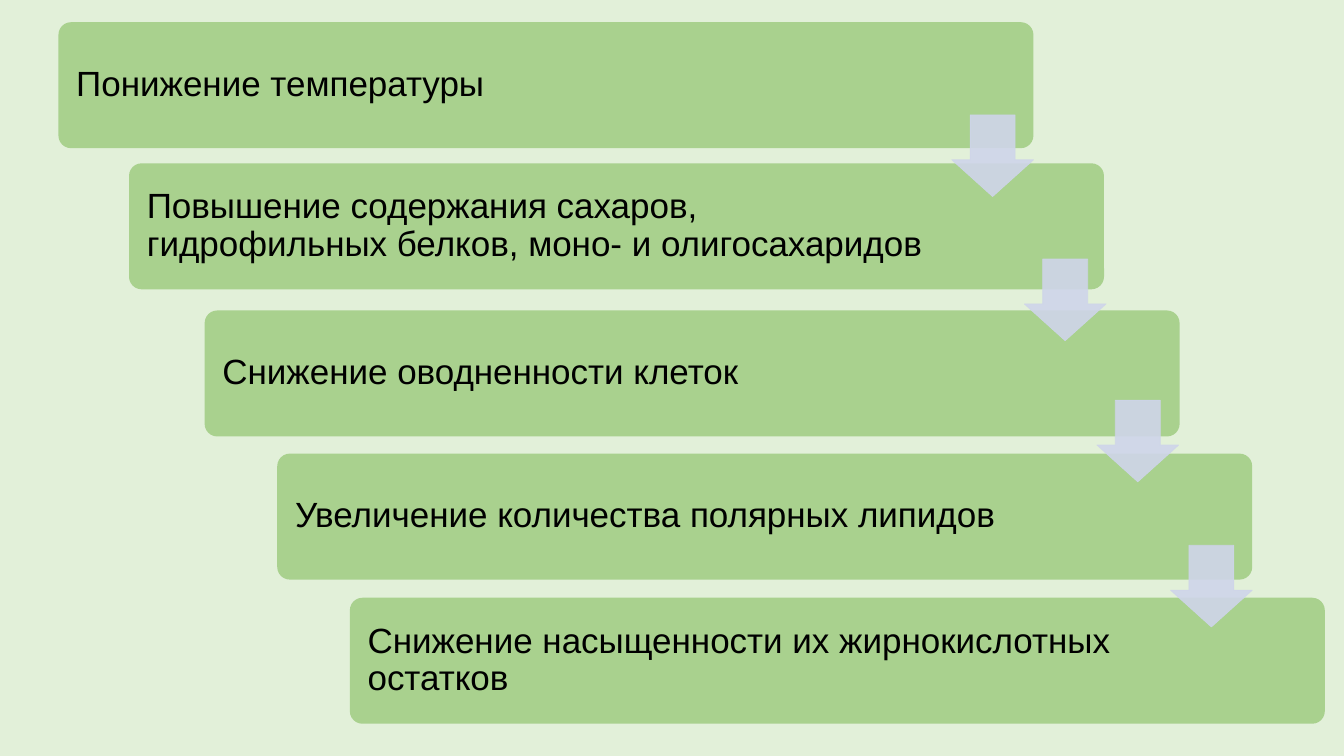
from dataclasses import dataclass

from lxml.etree import SubElement
from pptx import Presentation
from pptx.dml.color import RGBColor
from pptx.enum.shapes import MSO_SHAPE as Shape
from pptx.enum.text import MSO_ANCHOR as Anchor, PP_ALIGN as Align
from pptx.oxml.ns import qn
from pptx.slide import Slide
from pptx.util import Inches, Pt

COLORS = {"background": "E2F0D9", "step": "A9D18E", "arrow": "CFD5EA", "text": "000000"}
STEP_W, STEP_H = 9.67, 1.25
ARROW_SIZE = 0.81
ARROW_ALPHA = 90


@dataclass
class Step:
    """A rounded box of the cascade."""
    left: float
    top: float
    text: str


@dataclass
class Arrow:
    """A down arrow leading to the next step."""
    left: float
    top: float


STEPS = [
    Step(0.58, 0.22, "Понижение температуры"),
    Step(1.28, 1.62, "Повышение содержания сахаров, гидрофильных белков, моно- и олигосахаридов"),
    Step(2.03, 3.08, "Снижение оводненности клеток"),
    Step(2.75, 4.5, "Увеличение количества полярных липидов"),
    Step(3.47, 5.93, "Снижение насыщенности их жирнокислотных остатков"),
]
ARROWS = [Arrow(9.44, 1.14), Arrow(10.16, 2.57), Arrow(10.88, 3.97), Arrow(11.61, 5.41)]


def rgb(name: str) -> RGBColor:
    """Return the named colour."""
    return RGBColor.from_string(COLORS[name])


def draw_step(s: Slide, step: Step) -> None:
    """Draw a step box with its text."""
    sp = s.shapes.add_shape(Shape.ROUNDED_RECTANGLE, Inches(step.left), Inches(step.top),
                            Inches(STEP_W), Inches(STEP_H))
    sp.adjustments[0] = 0.1
    sp.shadow.inherit = False
    sp.fill.solid()
    sp.fill.fore_color.rgb = rgb("step")
    sp.line.fill.background()
    tf = sp.text_frame
    tf.word_wrap = True
    tf.vertical_anchor = Anchor.MIDDLE
    tf.margin_left, tf.margin_right = Inches(0.14), Inches(1.67)
    tf.margin_top = tf.margin_bottom = Inches(0.14)
    p = tf.paragraphs[0]
    p.alignment = Align.LEFT
    p.line_spacing = 0.9
    p.space_after = Pt(8.75)
    r = p.add_run()
    r.text = step.text
    r.font.name = "Arial"
    r.font.size = Pt(25)
    r.font.color.rgb = rgb("text")


def draw_arrow(s: Slide, arrow: Arrow) -> None:
    """Draw a slightly transparent down arrow."""
    sp = s.shapes.add_shape(Shape.DOWN_ARROW, Inches(arrow.left), Inches(arrow.top),
                            Inches(ARROW_SIZE), Inches(ARROW_SIZE))
    sp.adjustments[0] = 0.45
    sp.adjustments[1] = 0.55
    sp.adjustments[0], sp.adjustments[1] = 0.55, 0.45
    sp.shadow.inherit = False
    sp.line.width = Pt(0.5)
    for fill in (sp.fill, sp.line.fill):
        fill.solid()
        fill.fore_color.rgb = rgb("arrow")
    for color in sp.element.spPr.iter(qn("a:srgbClr")):
        SubElement(color, qn("a:alpha"), val=str(ARROW_ALPHA * 1000))


def main() -> None:
    """Build and save the slide."""
    prs = Presentation()
    prs.slide_width, prs.slide_height = Inches(13.33), Inches(7.5)
    s = prs.slides.add_slide(prs.slide_layouts[6])
    s.background.fill.solid()
    s.background.fill.fore_color.rgb = rgb("background")
    for step in STEPS:
        draw_step(s, step)
    for arrow in ARROWS:
        draw_arrow(s, arrow)
    prs.save("out.pptx")


if __name__ == "__main__":
    main()
